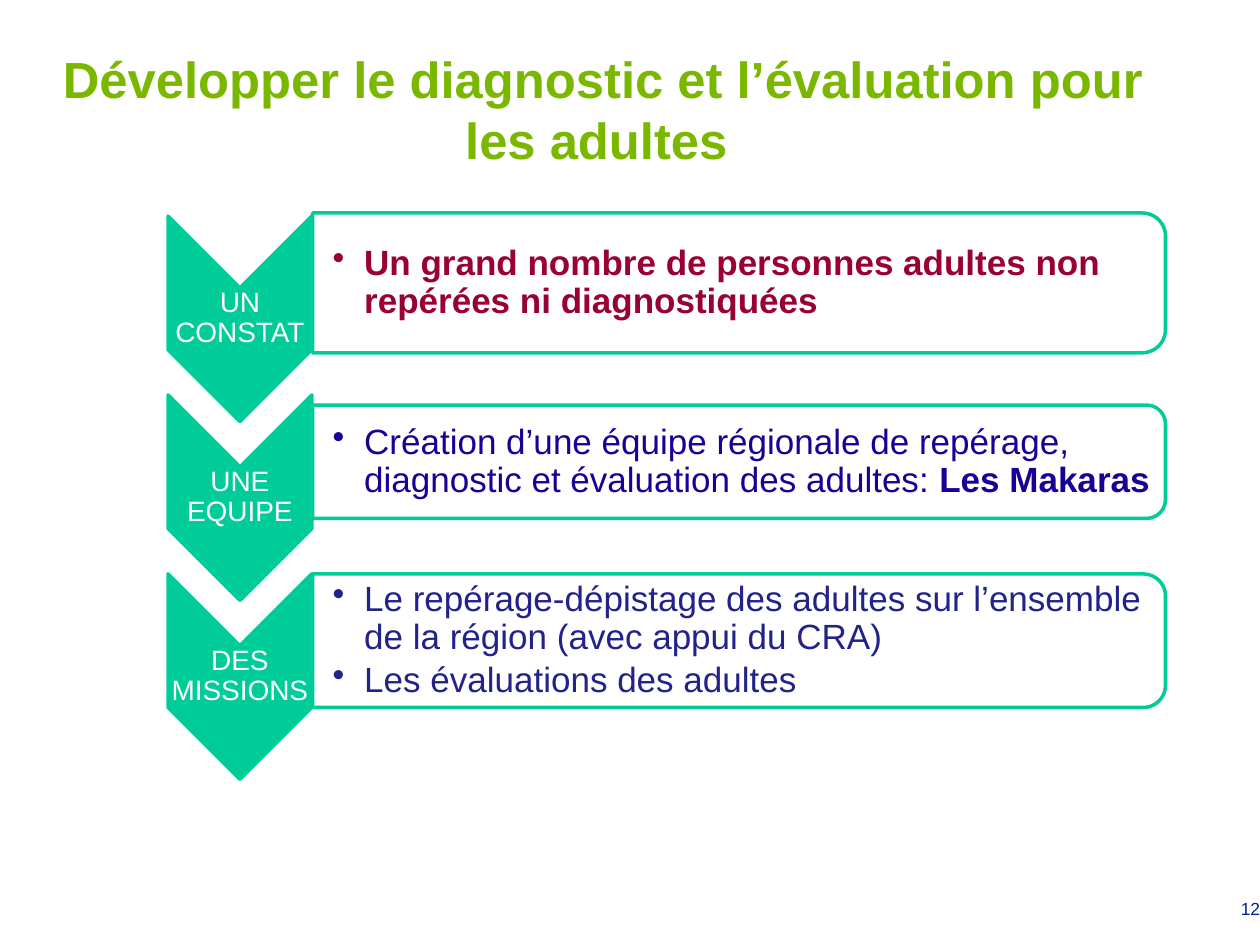
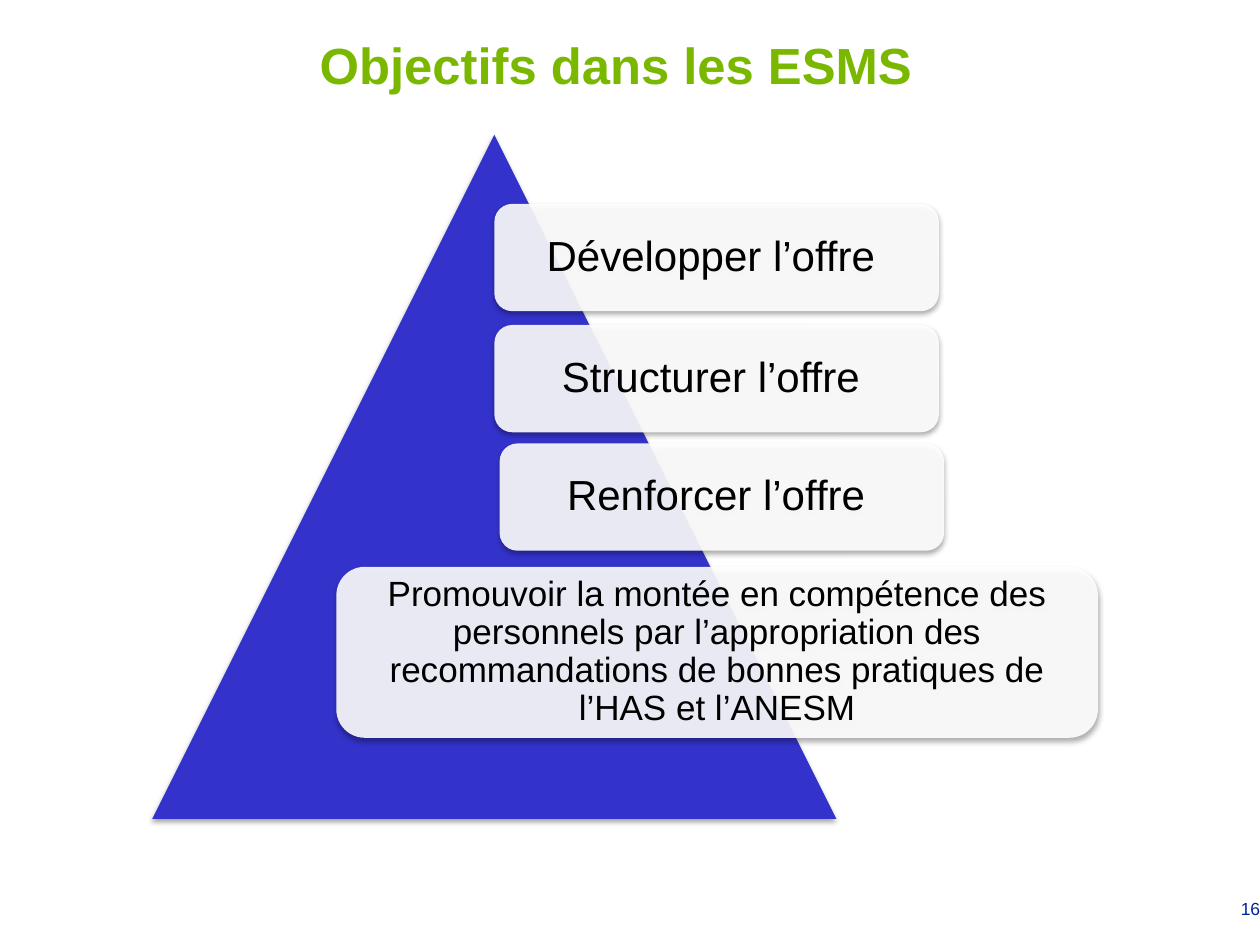
from dataclasses import dataclass

import lxml.etree
import pptx
import pptx.dml.color
import pptx.enum.shapes
import pptx.enum.text
import pptx.oxml.ns
import pptx.util

Pt = pptx.util.Pt
qn = pptx.oxml.ns.qn
Kind = pptx.enum.shapes.MSO_SHAPE
Align = pptx.enum.text.PP_ALIGN
Anchor = pptx.enum.text.MSO_ANCHOR

FONT = "Arial"
COLOURS = {
    "title": "7AB800",
    "number": "002395",
    "step": "00CC99",
    "white": "FFFFFF",
    "black": "000000",
    "finding": "990033",
    "team": "1A0195",
    "missions": "22228B",
    "pyramid": "3333CC",
}
DEFAULT_INSETS = (7.2, 3.6, 7.2, 3.6)
LABEL_INSETS = (0.7, 0.7, 0.7, 0.7)
PANEL_INSETS = (11.5, 0.7, 0.7, 0.7)
CORNER_INSET = 0.05  # share of a panel's height kept clear of text
CARD_OPACITY = 90


@dataclass(frozen=True)
class Box:
    left: float
    top: float
    width: float
    height: float

    def lengths(self) -> tuple:
        return Pt(self.left), Pt(self.top), Pt(self.width), Pt(self.height)

    def before_quarter_turn(self) -> "Box":
        """Frame that covers this box once it is rotated by 90 degrees."""
        shift = (self.width - self.height) / 2
        return Box(self.left + shift, self.top - shift, self.height, self.width)


@dataclass(frozen=True)
class Span:
    text: str
    bold: bool = False


@dataclass(frozen=True)
class Step:
    label: str
    panel_top: float
    panel_height: float
    colour: str
    items: list[list[Span]]


@dataclass(frozen=True)
class Card:
    text: str
    box: Box
    size: float = 24
    inset: float = 7.2


STEPS = [
    Step("UN CONSTAT", 121.7, 79.9, "finding", [
        [Span("Un grand nombre de personnes adultes non repérées ni diagnostiquées", True)],
    ]),
    Step("UNE EQUIPE", 231.5, 64.8, "team", [
        [Span("Création d’une équipe régionale de repérage, diagnostic et évaluation des adultes: "),
         Span("Les Makaras", True)],
    ]),
    Step("DES MISSIONS", 328, 76.3, "missions", [
        [Span("Le repérage-dépistage des adultes sur l’ensemble de la région (avec appui du CRA)")],
        [Span("Les évaluations des adultes")],
    ]),
]
CHEVRON = Box(96, 123.5, 82.2, 117.4)
CHEVRON_STEP = 102.2
PANEL_LEFT, PANEL_WIDTH = 178.6, 487.4

CARDS = [
    Card("Développer l’offre ", Box(282.5, 116.5, 254, 61.3)),
    Card("Structurer l’offre ", Box(282.5, 185.7, 254, 61.3)),
    Card("Renforcer l’offre ", Box(285.5, 253.4, 254, 61.3)),
    Card("Promouvoir la montée en compétence des personnels par l’appropriation des "
         "recommandations de bonnes pratiques de l’HAS et l’ANESM",
         Box(192.2, 323.9, 435.2, 97.7), 20, 6),
]
PYRAMID = Box(87, 77, 391, 391)


def colour(name: str) -> pptx.dml.color.RGBColor:
    return pptx.dml.color.RGBColor.from_string(COLOURS[name])


def add_bullet(para) -> None:
    properties = para._p.get_or_add_pPr()
    properties.set("marL", str(Pt(18)))
    properties.set("indent", str(-Pt(18)))
    lxml.etree.SubElement(properties, qn("a:buChar")).set("char", "•")


def write_text(shape, paragraphs: list[list[Span]], *, size: float, ink: str,
               align=Align.CENTER, anchor=Anchor.MIDDLE, insets=DEFAULT_INSETS,
               line_spacing: float = 1.0, gap: float = 0, bullets: bool = False) -> None:
    frame = shape.text_frame
    frame.word_wrap = True
    frame.vertical_anchor = anchor
    (frame.margin_left, frame.margin_top,
     frame.margin_right, frame.margin_bottom) = map(Pt, insets)
    for index, spans in enumerate(paragraphs):
        para = frame.add_paragraph() if index else frame.paragraphs[0]
        para.alignment = align
        para.line_spacing = line_spacing
        if index:
            para.space_before = Pt(gap)
        if bullets:
            add_bullet(para)
        for span in spans:
            run = para.add_run()
            run.text = span.text
            run.font.name = FONT
            run.font.size = Pt(size)
            run.font.bold = span.bold
            run.font.color.rgb = colour(ink)


def add_text(page, box: Box, paragraphs: list[list[Span]], **text_format) -> None:
    write_text(page.shapes.add_textbox(*box.lengths()), paragraphs, **text_format)


def add_figure(page, kind, box: Box, *, fill: str, opacity: int = 100,
               outline: str = "", quarter_turn: bool = False, shadow: bool = False):
    frame = box.before_quarter_turn() if quarter_turn else box
    shape = page.shapes.add_shape(kind, *frame.lengths())
    shape.rotation = 90 if quarter_turn else 0
    shape.shadow.inherit = False
    shape.fill.solid()
    shape.fill.fore_color.rgb = colour(fill)
    if opacity < 100:
        set_opacity(shape._element.spPr.find(f"{qn('a:solidFill')}/{qn('a:srgbClr')}"), opacity)
    if outline:
        shape.line.color.rgb = colour(outline)
        shape.line.width = Pt(2)
    else:
        shape.line.fill.background()
    if shadow:
        add_shadow(shape)
    return shape


def set_opacity(colour_element, percent: int) -> None:
    lxml.etree.SubElement(colour_element, qn("a:alpha")).set("val", str(percent * 1000))


def add_shadow(shape) -> None:
    effects = shape._element.spPr.find(qn("a:effectLst"))
    outer = lxml.etree.SubElement(effects, qn("a:outerShdw"), blurRad=str(Pt(3.1)),
                                  dist=str(Pt(1.8)), dir="5400000", rotWithShape="0")
    tint = lxml.etree.SubElement(outer, qn("a:srgbClr"), val=COLOURS["black"])
    set_opacity(tint, 35)


def add_page(deck, title: str, title_box: Box, number: int):
    page = deck.slides.add_slide(deck.slide_layouts[6])
    add_text(page, Box(691.2, 509.8, 36, 36), [[Span(str(number))]], size=10,
             ink="number", align=Align.RIGHT, anchor=Anchor.TOP)
    add_text(page, title_box, [[Span(title, True)]], size=29, ink="title")
    return page


def add_step(page, step: Step, index: int) -> None:
    chevron = Box(CHEVRON.left, CHEVRON.top + index * CHEVRON_STEP,
                  CHEVRON.width, CHEVRON.height)
    notch = chevron.width / 2
    add_figure(page, Kind.CHEVRON, chevron, fill="step", outline="step", quarter_turn=True)
    add_text(page, Box(chevron.left, chevron.top + notch, chevron.width, chevron.height - 2 * notch),
             [[Span(step.label)]], size=16, ink="white", insets=LABEL_INSETS, line_spacing=0.9)

    panel = Box(PANEL_LEFT, step.panel_top, PANEL_WIDTH, step.panel_height)
    inset = CORNER_INSET * panel.height
    add_figure(page, Kind.ROUND_2_SAME_RECTANGLE, panel, fill="white", opacity=CARD_OPACITY,
               outline="step", quarter_turn=True)
    add_text(page, Box(panel.left, panel.top + inset, panel.width - inset, panel.height - 2 * inset),
             step.items, size=20, ink=step.colour, align=Align.LEFT, insets=PANEL_INSETS,
             line_spacing=0.9, gap=3, bullets=True)


def add_card(page, card: Card) -> None:
    shape = add_figure(page, Kind.ROUNDED_RECTANGLE, card.box, fill="white",
                       opacity=CARD_OPACITY, shadow=True)
    write_text(shape, [[Span(card.text)]], size=card.size, ink="black",
               insets=(card.inset,) * 4, line_spacing=0.9)


def main() -> None:
    deck = pptx.Presentation()
    deck.slide_width, deck.slide_height = Pt(720), Pt(540)

    page = add_page(deck, "Développer le diagnostic et l’évaluation pour les adultes ",
                    Box(23.8, 17.3, 642.2, 90), 12)
    for index, step in enumerate(STEPS):
        add_step(page, step, index)

    page = add_page(deck, "Objectifs dans les ESMS", Box(31, 1.4, 642.2, 70.6), 16)
    add_figure(page, Kind.ISOSCELES_TRIANGLE, PYRAMID, fill="pyramid", shadow=True)
    for card in CARDS:
        add_card(page, card)

    deck.save("out.pptx")


if __name__ == "__main__":
    main()
